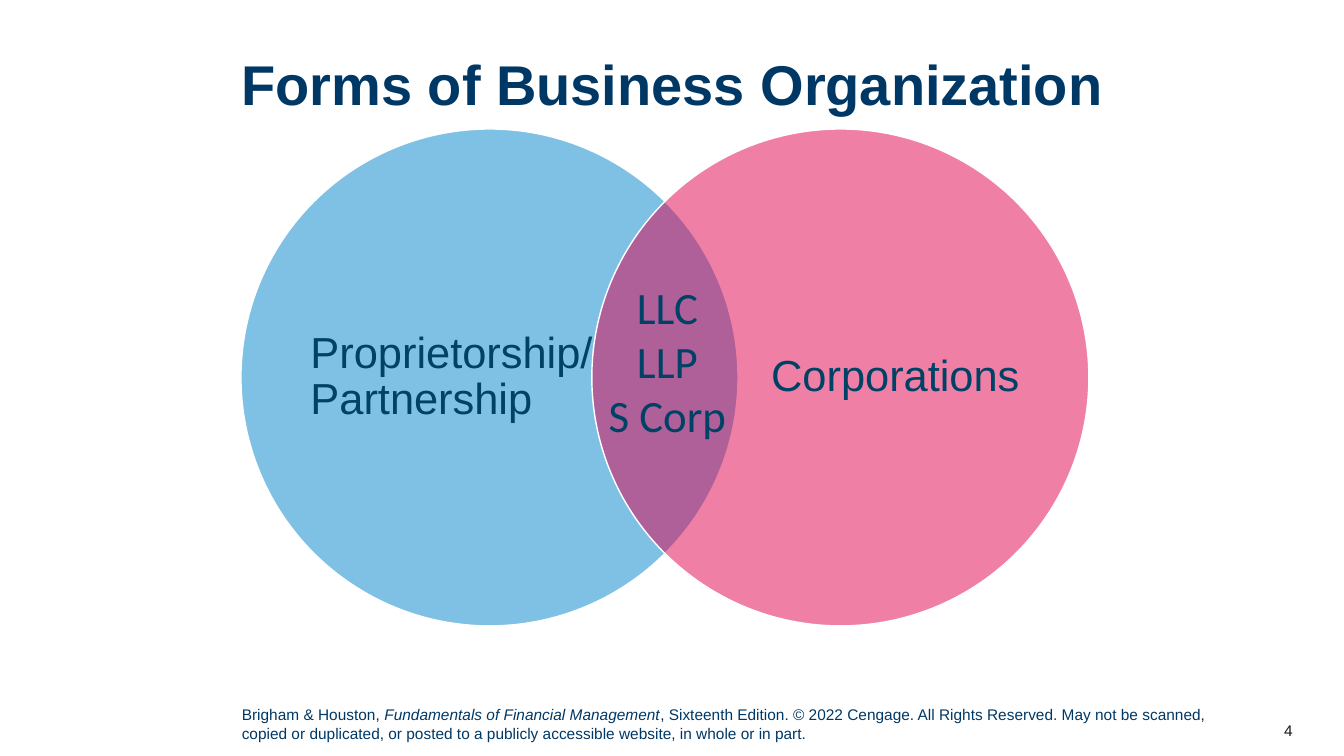
from lxml.etree import SubElement
from pptx import Presentation
from pptx.dml.color import RGBColor
from pptx.enum.shapes import MSO_SHAPE
from pptx.enum.text import MSO_ANCHOR, PP_ALIGN
from pptx.oxml.ns import qn
from pptx.util import Inches, Pt

TITLE = "Forms of Business Organization"
# label, fill, circle left, label left, label alignment
CIRCLES = [
    ("Proprietorship/\vPartnership", "0085CA", 2.39, 3.08, PP_ALIGN.LEFT),
    ("Corporations", "E0004D", 5.87, 7.27, PP_ALIGN.RIGHT),
]
OVERLAP = ["LLC", "LLP", "S Corp"]
CREDIT = [
    ("Brigham & Houston, ", False),
    ("Fundamentals of Financial Management", True),
    (", Sixteenth Edition. © 2022 Cengage. All Rights Reserved. May not be scanned, "
     "copied or duplicated, or posted to a publicly accessible website, "
     "in whole or in part.", False),
]
PAGE_NUMBER = "4"

NAVY, LABEL_BLUE, INK, WHITE = "003865", "004265", "181717", "FFFFFF"
CIRCLE_TOP, DIAMETER = 1.28, 4.93
LABEL_WIDTH, LABEL_HEIGHT = 2.84, 3.77


def color(hex_code):
    return RGBColor.from_string(hex_code)


def style(font, size, hex_code, name="Arial"):
    font.name, font.size = name, Pt(size)
    font.color.rgb = color(hex_code)


def add_text(slide, box, lines, size, hex_code, align=PP_ALIGN.LEFT,
             anchor=MSO_ANCHOR.TOP, font_name="Arial"):
    frame = slide.shapes.add_textbox(*map(Inches, box)).text_frame
    frame.word_wrap = True
    frame.vertical_anchor = anchor
    frame.text = "\n".join(lines)
    for paragraph in frame.paragraphs:
        paragraph.alignment = align
        for run in paragraph.runs:
            style(run.font, size, hex_code, font_name)
    return frame


def add_circle(slide, left, hex_code):
    """Add a half-transparent circle with a thin white outline."""
    circle = slide.shapes.add_shape(
        MSO_SHAPE.OVAL, Inches(left), Inches(CIRCLE_TOP), Inches(DIAMETER), Inches(DIAMETER))
    circle.shadow.inherit = False
    circle.fill.solid()
    circle.fill.fore_color.rgb = color(hex_code)
    fill_color = circle.fill._xPr.find(qn("a:solidFill"))[0]
    SubElement(fill_color, qn("a:alpha"), val="50000")
    circle.line.color.rgb = color(WHITE)
    circle.line.width = Pt(1)


def main():
    deck = Presentation()
    deck.slide_width, deck.slide_height = Inches(13.33), Inches(7.5)
    slide = deck.slides.add_slide(deck.slide_layouts[5])

    title = slide.shapes.title
    title.left, title.top, title.width, title.height = map(Inches, (0.52, 0.52, 12.29, 1.33))
    title.text_frame.text = TITLE
    title.text_frame.vertical_anchor = MSO_ANCHOR.TOP
    heading = title.text_frame.paragraphs[0]
    heading.alignment = PP_ALIGN.CENTER
    heading.line_spacing = 0.9
    style(heading.runs[0].font, 40, NAVY)
    heading.runs[0].font.bold = True

    label_top = CIRCLE_TOP + (DIAMETER - LABEL_HEIGHT) / 2
    for label, fill, circle_left, label_left, align in CIRCLES:
        add_circle(slide, circle_left, fill)
        frame = add_text(slide, (label_left, label_top, LABEL_WIDTH, LABEL_HEIGHT), [label],
                         31, LABEL_BLUE, align, MSO_ANCHOR.MIDDLE)
        frame.margin_left = frame.margin_right = frame.margin_top = frame.margin_bottom = 0
        frame.paragraphs[0].line_spacing = 0.9

    add_text(slide, (5.82, 2.73, 1.6, 1.72), OVERLAP, 32, LABEL_BLUE,
             PP_ALIGN.CENTER, font_name="Calibri")

    credit = add_text(slide, (2.3, 6.95, 9.8, 0.47), [], 11, NAVY).paragraphs[0]
    for words, italic in CREDIT:
        run = credit.add_run()
        run.text = words
        style(run.font, 11, NAVY)
        run.font.italic = italic

    add_text(slide, (12.12, 7.05, 0.8, 0.4), [PAGE_NUMBER], 11, INK,
             PP_ALIGN.RIGHT, MSO_ANCHOR.MIDDLE)
    deck.save("out.pptx")


if __name__ == "__main__":
    main()
